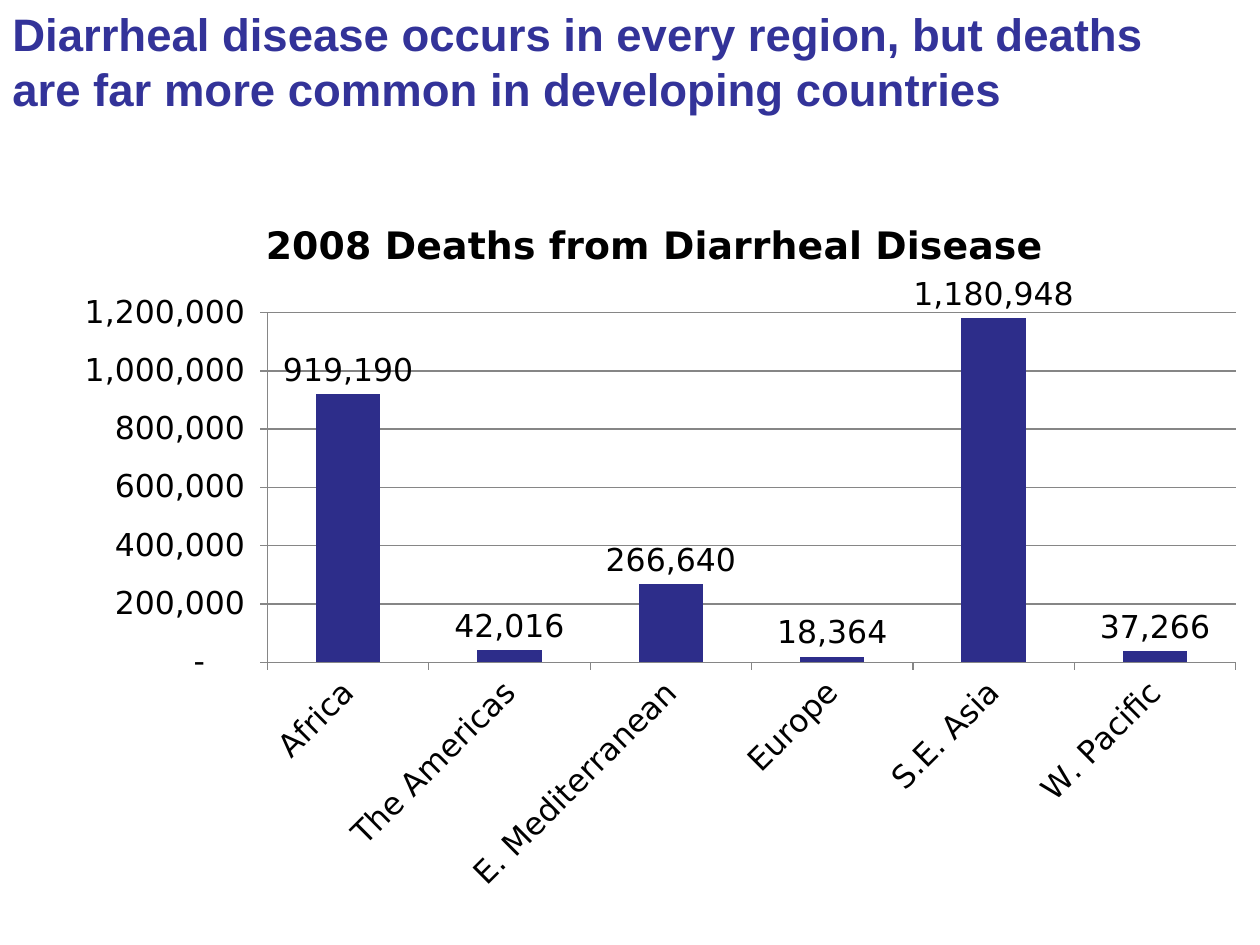
import pptx
import pptx.chart.data
import pptx.dml.color
import pptx.enum.chart
import pptx.enum.text
import pptx.oxml
import pptx.oxml.ns
import pptx.util
from pptx.util import Cm

HEADING_BLUE = pptx.dml.color.RGBColor(0x33, 0x33, 0x99)
BAR_BLUE = pptx.dml.color.RGBColor(0x2D, 0x2D, 0x8A)
BLACK = pptx.dml.color.RGBColor(0, 0, 0)
GRAY = pptx.dml.color.RGBColor(0x86, 0x86, 0x86)

CHART_TITLE = "2008 Deaths from Diarrheal Disease"
NUMBER_FORMAT = '_(* #,##0_);_(* \\(#,##0\\);_(* "-"??_);_('
DEATHS = {
    "Africa": 919190,
    "The Americas": 42016,
    "E. Mediterranean": 266640,
    "Europe": 18364,
    "S.E. Asia": 1180948,
    "W. Pacific": 37266,
}


def style_font(font, name, size, color, bold=False):
    font.name = name
    font.size = pptx.util.Pt(size)
    font.color.rgb = color
    font.bold = bold


def add_heading(slide, text):
    shape = slide.shapes.add_textbox(Cm(0), Cm(0), Cm(24.5), Cm(2.2))
    text_frame = shape.text_frame
    text_frame.word_wrap = True
    text_frame.vertical_anchor = pptx.enum.text.MSO_ANCHOR.TOP
    text_frame.text = text
    style_font(text_frame.paragraphs[0].runs[0].font, "Arial", 26, HEADING_BLUE, True)


def place_plot_area(chart, left, top, width, height):
    plot_area = chart.plots[0]._element.getparent()
    for layout in plot_area.findall(pptx.oxml.ns.qn("c:layout")):
        plot_area.remove(layout)
    places = "".join(
        f'<c:{tag} val="{value}"/>'
        for tag, value in (("x", left), ("y", top), ("w", width), ("h", height))
    )
    plot_area.insert(0, pptx.oxml.parse_xml(
        f'<c:layout {pptx.oxml.ns.nsdecls("c")}><c:manualLayout>'
        '<c:layoutTarget val="inner"/><c:xMode val="edge"/><c:yMode val="edge"/>'
        f'{places}</c:manualLayout></c:layout>'
    ))


def style_axes(chart):
    for axis in (chart.category_axis, chart.value_axis):
        axis.major_tick_mark = pptx.enum.chart.XL_TICK_MARK.OUTSIDE
        axis.format.line.color.rgb = GRAY
        axis.format.line.width = pptx.util.Pt(0.75)
        style_font(axis.tick_labels.font, "DejaVu Sans", 18, BLACK)
    category_text = chart.category_axis._element.find(pptx.oxml.ns.qn("c:txPr"))
    category_text.find(pptx.oxml.ns.qn("a:bodyPr")).set("rot", "-2700000")

    value_axis = chart.value_axis
    value_axis.minimum_scale = 0
    value_axis.maximum_scale = 1200000
    value_axis.major_unit = 200000
    value_axis.tick_labels.number_format = NUMBER_FORMAT
    value_axis.tick_labels.number_format_is_linked = False
    value_axis.major_gridlines.format.line.color.rgb = GRAY
    value_axis.major_gridlines.format.line.width = pptx.util.Pt(0.75)


def style_bars(plot):
    plot.gap_width = 150
    plot.vary_by_categories = False
    series = plot.series[0]
    series.format.fill.solid()
    series.format.fill.fore_color.rgb = BAR_BLUE
    labels = series.data_labels
    labels.show_value = True
    labels.number_format = NUMBER_FORMAT
    labels.number_format_is_linked = False
    labels.position = pptx.enum.chart.XL_LABEL_POSITION.OUTSIDE_END
    style_font(labels.font, "DejaVu Sans", 18, BLACK)


def add_deaths_chart(slide):
    chart_data = pptx.chart.data.CategoryChartData()
    chart_data.categories = list(DEATHS)
    chart_data.add_series(CHART_TITLE, list(DEATHS.values()))
    chart = slide.shapes.add_chart(
        pptx.enum.chart.XL_CHART_TYPE.COLUMN_CLUSTERED,
        Cm(1), Cm(3.86), Cm(24.4), Cm(14.38), chart_data,
    ).chart
    style_font(chart.font, "DejaVu Sans", 18, BLACK)
    chart.has_legend = False
    chart.has_title = True
    chart.chart_title.include_in_layout = False
    title_frame = chart.chart_title.text_frame
    title_frame.text = CHART_TITLE
    style_font(title_frame.paragraphs[0].runs[0].font, "DejaVu Sans", 21.6, BLACK, True)
    style_axes(chart)
    style_bars(chart.plots[0])
    place_plot_area(chart, 0.18, 0.17, 0.8, 0.49)


def main():
    presentation = pptx.Presentation()
    presentation.slide_width = Cm(25.4)
    presentation.slide_height = Cm(19.05)
    slide = presentation.slides.add_slide(presentation.slide_layouts[6])
    add_heading(
        slide,
        "Diarrheal disease occurs in every region, but deaths "
        "are far more common in developing countries",
    )
    add_deaths_chart(slide)
    presentation.save("out.pptx")


if __name__ == "__main__":
    main()
